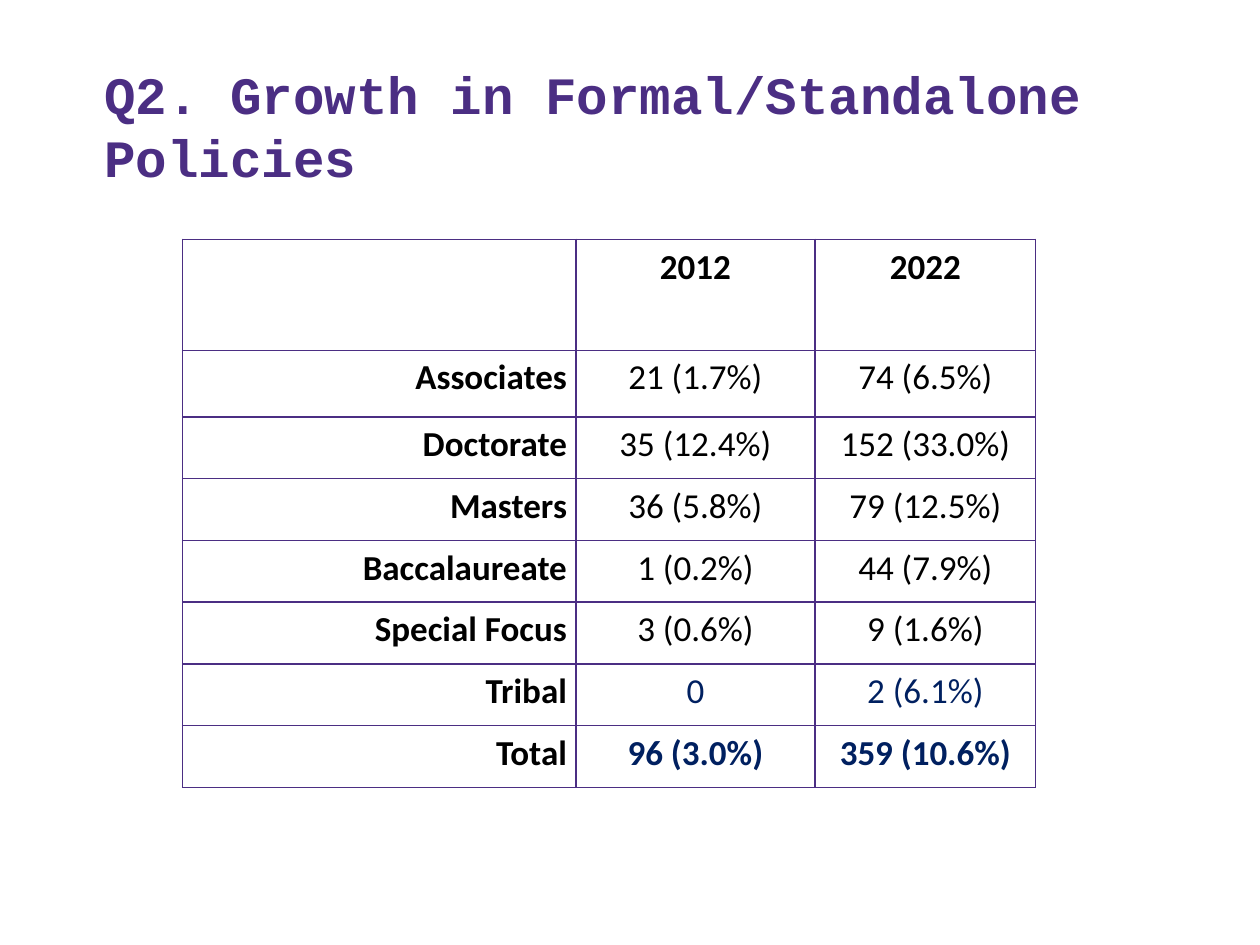
from typing import NamedTuple

from lxml.etree import SubElement
from pptx import Presentation
from pptx.dml.color import RGBColor
from pptx.enum.text import MSO_ANCHOR, PP_ALIGN as Align
from pptx.oxml.ns import qn
from pptx.util import Inches, Pt

PURPLE, BLACK, NAVY = "4B2E83", "000000", "002060"


class PolicyRow(NamedTuple):
    label: str
    in_2012: str
    in_2022: str
    value_color: str = BLACK
    bold_values: bool = False


POLICY_ROWS = [
    PolicyRow("", "2012", "2022", bold_values=True),
    PolicyRow("Associates", "21 (1.7%)", "74 (6.5%)"),
    PolicyRow("Doctorate", "35 (12.4%)", "152 (33.0%)"),
    PolicyRow("Masters", "36 (5.8%)", "79 (12.5%)"),
    PolicyRow("Baccalaureate", "1 (0.2%)", "44 (7.9%)"),
    PolicyRow("Special Focus", "3 (0.6%)", "9 (1.6%)"),
    PolicyRow("Tribal", "0", "2 (6.1%)", NAVY),
    PolicyRow("Total", "96 (3.0%)", "359 (10.6%)", NAVY, True),
]
COLUMN_WIDTHS = [3.12, 1.9, 1.75]
ROW_HEIGHTS = [0.88, 0.53] + [0.49] * 6


def add_span(para, text: str, font: str, size: float, color: str, bold: bool) -> None:
    span = para.add_run()
    span.text = text
    span.font.name = font
    span.font.size = Pt(size)
    span.font.bold = bold
    span.font.color.rgb = RGBColor.from_string(color)


def add_borders(cell, color: str, width: float) -> None:
    """Outline all four sides; must run before the cell's fill is set."""
    properties = cell._tc.get_or_add_tcPr()
    for side in ("a:lnL", "a:lnR", "a:lnT", "a:lnB"):
        line = SubElement(properties, qn(side), w=str(Pt(width)))
        fill = SubElement(line, qn("a:solidFill"))
        SubElement(fill, qn("a:srgbClr"), val=color)


def fill_cell(cell, text: str, align: Align, color: str, bold: bool) -> None:
    add_borders(cell, PURPLE, 1)
    cell.fill.background()
    cell.margin_left = cell.margin_right = Inches(0.07)
    cell.margin_top = cell.margin_bottom = Inches(0.05)
    para = cell.text_frame.paragraphs[0]
    para.alignment = align
    para.space_after = Pt(1)
    if text:
        add_span(para, text, "Calibri", 20, color, bold)


def add_title(slide, text: str) -> None:
    box = slide.shapes.add_textbox(Inches(0.73), Inches(0.41), Inches(8.95), Inches(1.08))
    frame = box.text_frame
    frame.word_wrap = True
    frame.vertical_anchor = MSO_ANCHOR.BOTTOM
    frame.margin_bottom = 0
    para = frame.paragraphs[0]
    para.line_spacing = Pt(36)
    add_span(para, text, "Courier New", 30, PURPLE, True)


def add_policy_table(slide) -> None:
    table = slide.shapes.add_table(
        len(POLICY_ROWS), len(COLUMN_WIDTHS), Inches(1.45), Inches(1.9),
        Inches(sum(COLUMN_WIDTHS)), Inches(sum(ROW_HEIGHTS)),
    ).table
    table.horz_banding = False
    table.first_row = False
    for column, width in zip(table.columns, COLUMN_WIDTHS):
        column.width = Inches(width)
    for row, height, policy in zip(table.rows, ROW_HEIGHTS, POLICY_ROWS):
        row.height = Inches(height)
        label, *values = row.cells
        fill_cell(label, policy.label, Align.RIGHT, BLACK, True)
        for cell, value in zip(values, (policy.in_2012, policy.in_2022)):
            fill_cell(cell, value, Align.CENTER, policy.value_color, policy.bold_values)


def main() -> None:
    deck = Presentation()
    deck.slide_width, deck.slide_height = Inches(10), Inches(7.5)
    slide = deck.slides.add_slide(deck.slide_layouts[6])
    add_title(slide, "Q2. Growth in Formal/Standalone Policies")
    add_policy_table(slide)
    deck.save("out.pptx")


if __name__ == "__main__":
    main()
